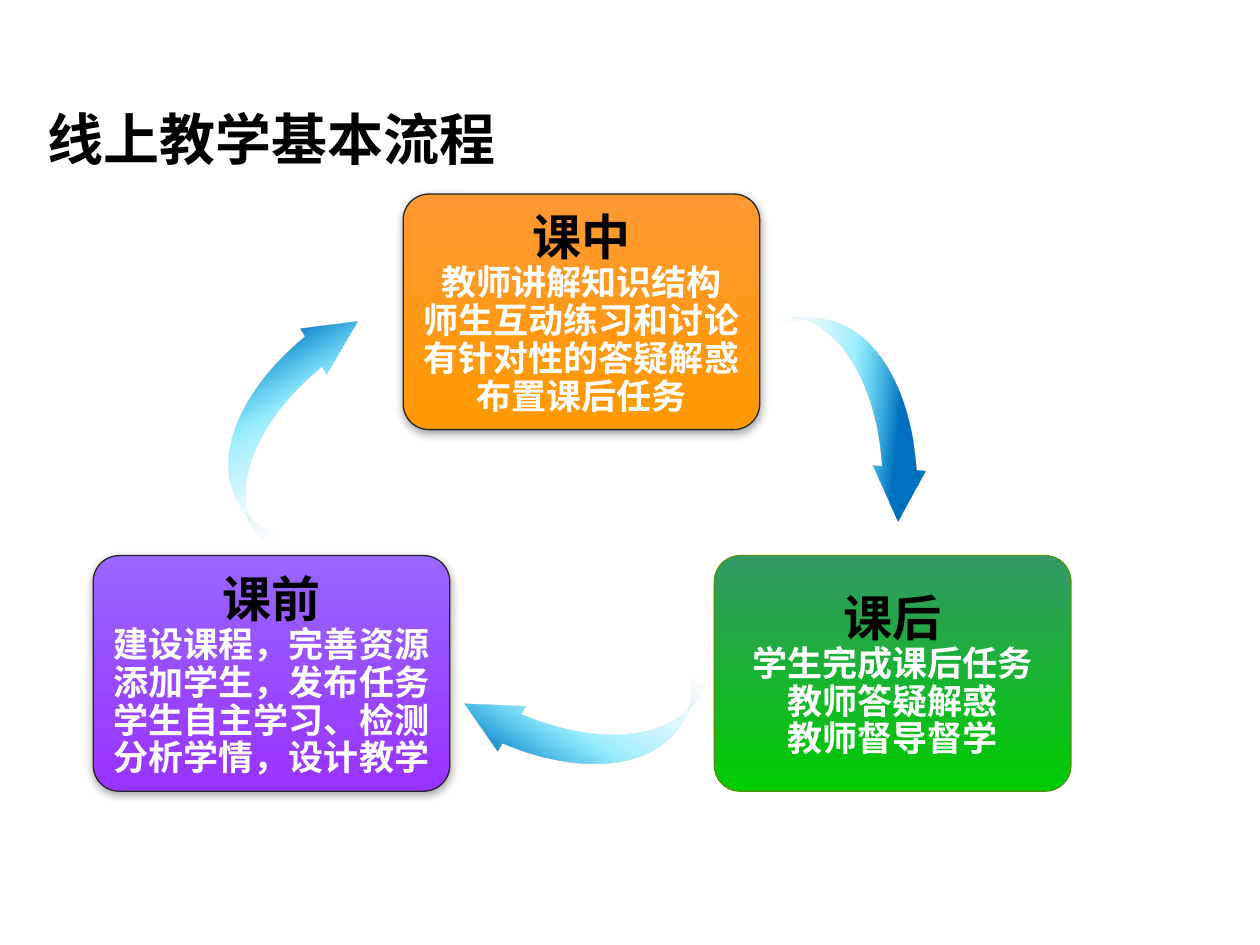
from lxml import etree
from pptx import Presentation
from pptx import util as u
from pptx.dml.color import RGBColor
from pptx.enum import shapes, text
from pptx.oxml import ns

FONT = "Noto Sans CJK SC"
BLACK = RGBColor(0x00, 0x00, 0x00)
WHITE = RGBColor(0xFF, 0xFF, 0xFF)
CHARCOAL = RGBColor(0x26, 0x26, 0x26)
OLIVE = RGBColor(0x4F, 0x95, 0x0F)
ORANGE = RGBColor(0xFF, 0x99, 0x00)
LIGHT_ORANGE = RGBColor(0xFF, 0x99, 0x33)
PURPLE = RGBColor(0x99, 0x33, 0xFF)
LIGHT_PURPLE = RGBColor(0x99, 0x66, 0xFF)
GREEN = RGBColor(0x00, 0xCC, 0x00)
DARK_GREEN = RGBColor(0x33, 0x99, 0x66)
BLUE = RGBColor(0x00, 0x70, 0xC0)
CYAN = RGBColor(0x13, 0xD6, 0xFD)
SKY = RGBColor(0x7F, 0xD6, 0xFF)
PALE_GRAY = RGBColor(0xE6, 0xE6, 0xE6)

ARROW_STOPS = [(18, BLUE, 100), (34, CYAN, 42), (59, SKY, 0), (100, PALE_GRAY, 0)]
ARROW_ADJUSTMENTS = (0.179, 0.276, 0.277)

STAGES = [
    (3.2, 1.54, LIGHT_ORANGE, ORANGE, CHARCOAL, True, "课中",
     ["教师讲解知识结构", "师生互动练习和讨论", "有针对性的答疑解惑", "布置课后任务"]),
    (0.74, 4.41, LIGHT_PURPLE, PURPLE, CHARCOAL, True, "课前",
     ["建设课程，完善资源", "添加学生，发布任务", "学生自主学习、检测", "分析学情，设计教学"]),
    (5.67, 4.41, DARK_GREEN, GREEN, OLIVE, False, "课后",
     ["学生完成课后任务", "教师答疑解惑", "教师督导督学"]),
]
ARROWS = [(5.26, 2.52, 6.1), (1.52, 2.92, 240.3), (3.72, 4.5, 122.5)]


def add_element(parent, tag, **attributes):
    element = etree.SubElement(parent, ns.qn(tag))
    for name, value in attributes.items():
        element.set(name, str(value))
    return element


def add_color(parent, color, opacity):
    swatch = add_element(parent, "a:srgbClr", val=color)
    if opacity < 100:
        add_element(swatch, "a:alpha", val=opacity * 1000)


def fill_gradient(shape, stops, angle):
    shape.fill.gradient()
    shape.fill.gradient_angle = angle
    stop_list = shape._element.spPr.find(".//" + ns.qn("a:gsLst"))
    for stop in list(stop_list):
        stop_list.remove(stop)
    for position, color, opacity in stops:
        add_color(add_element(stop_list, "a:gs", pos=position * 1000), color, opacity)


def add_shadow(shape):
    effects = shape._element.spPr.find(ns.qn("a:effectLst"))
    shadow = add_element(effects, "a:outerShdw", blurRad=u.Pt(5), dist=u.Pt(1.8),
                         dir=90 * 60000, algn="ctr", rotWithShape=0)
    add_color(shadow, BLACK, 35)


def write_text(paragraph, words, size, color=BLACK, align=text.PP_ALIGN.CENTER, spacing=1.0):
    paragraph.alignment = align
    paragraph.line_spacing = spacing
    run = paragraph.add_run()
    run.text = words
    run.font.size = u.Pt(size)
    run.font.bold = True
    run.font.color.rgb = color
    run.font.name = FONT
    add_element(run.font._element, "a:ea", typeface=FONT)


def add_stage(slide, left, top, upper, lower, outline, shadowed, heading, tasks):
    card = slide.shapes.add_shape(shapes.MSO_SHAPE.ROUNDED_RECTANGLE, u.Inches(left),
                                  u.Inches(top), u.Inches(2.83), u.Inches(1.87))
    card.adjustments[0] = 0.11
    card.shadow.inherit = False
    fill_gradient(card, [(0, upper, 100), (100, lower, 100)], 270)
    card.line.color.rgb = outline
    card.line.width = u.Pt(0.75)
    if shadowed:
        add_shadow(card)
    frame = card.text_frame
    frame.word_wrap = True
    frame.vertical_anchor = text.MSO_ANCHOR.MIDDLE
    write_text(frame.paragraphs[0], heading, 28)
    for task in tasks:
        write_text(frame.add_paragraph(), task, 20, color=WHITE, spacing=0.9)


def add_arrow(slide, left, top, rotation):
    arrow = slide.shapes.add_shape(shapes.MSO_SHAPE.CURVED_DOWN_ARROW, u.Inches(left),
                                   u.Inches(top), u.Inches(2.16), u.Inches(1.53))
    for index, value in enumerate(ARROW_ADJUSTMENTS):
        arrow.adjustments[index] = value
    arrow.rotation = rotation
    arrow.shadow.inherit = False
    fill_gradient(arrow, ARROW_STOPS, 180)
    arrow.line.fill.background()


def add_title(slide, words):
    title = slide.shapes.add_textbox(u.Inches(0.28), u.Inches(0.51),
                                     u.Inches(5.28), u.Inches(0.91))
    frame = title.text_frame
    frame.word_wrap = True
    frame.auto_size = text.MSO_AUTO_SIZE.SHAPE_TO_FIT_TEXT
    write_text(frame.paragraphs[0], words, 32, align=text.PP_ALIGN.JUSTIFY, spacing=1.5)


def main():
    deck = Presentation()
    deck.slide_width = u.Inches(10)
    deck.slide_height = u.Inches(7.5)
    slide = deck.slides.add_slide(deck.slide_layouts[6])
    for stage in STAGES:
        add_stage(slide, *stage)
    for arrow in ARROWS:
        add_arrow(slide, *arrow)
    add_title(slide, "线上教学基本流程")
    deck.save("out.pptx")


if __name__ == "__main__":
    main()
